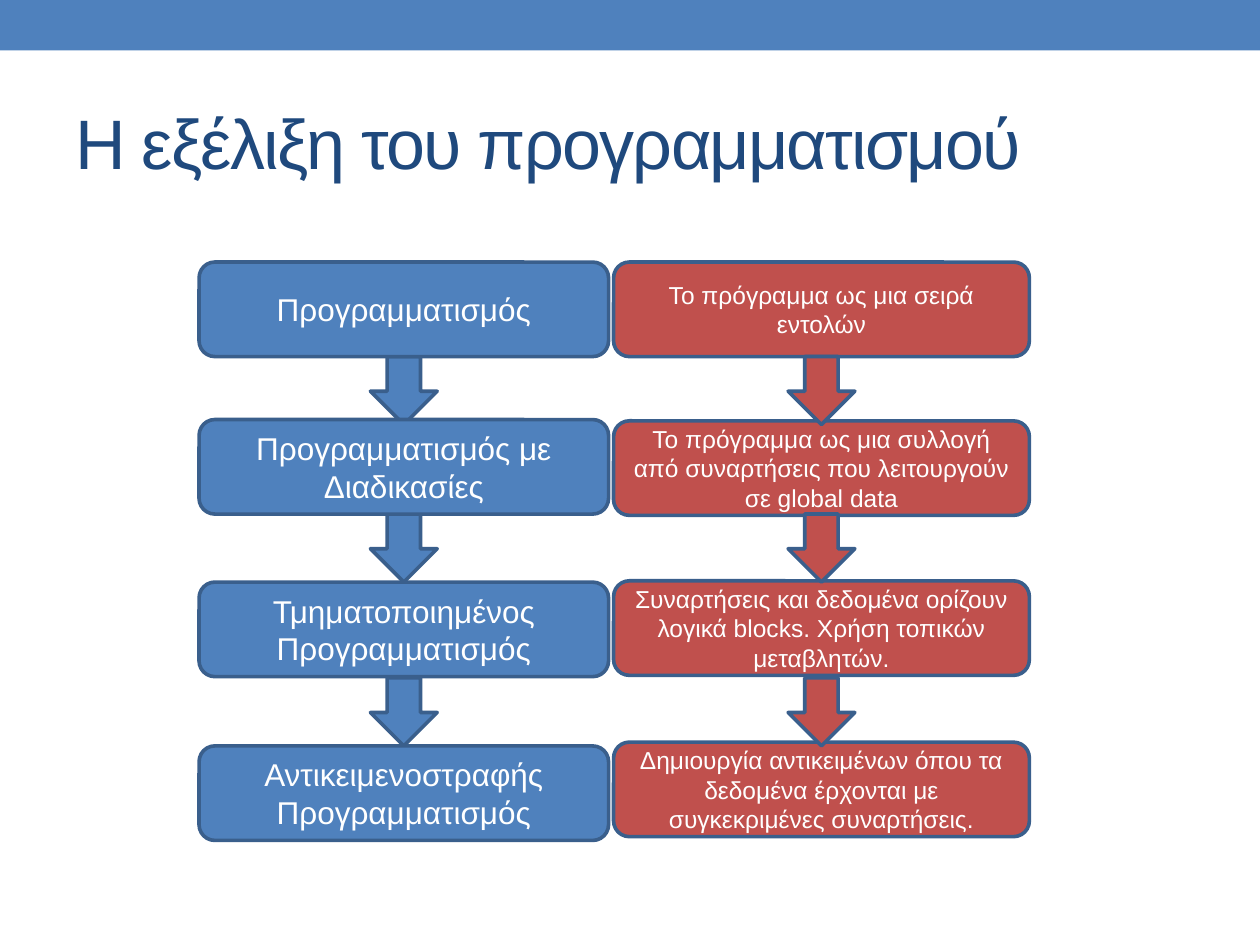
from pptx import Presentation
from pptx.dml.color import RGBColor
from pptx.enum.shapes import MSO_SHAPE as Shape
from pptx.enum.text import MSO_ANCHOR as Anchor, PP_ALIGN as Align
from pptx.util import Inches, Pt

COLORS = {
    "blue": "4F81BD",
    "red": "C0504D",
    "outline": "3A5F8C",
    "title": "1F497D",
    "white": "FFFFFF",
}
FONT = "Arial"
BOX_HEIGHT = 0.75
ARROW_WIDTH, ARROW_HEIGHT = 0.53, 0.54
ARROW_TOPS = (2.83, 4.08, 5.38)

STAGES = (
    (2.08, "Προγραμματισμός"),
    (3.33, "Προγραμματισμός με Διαδικασίες"),
    (4.62, "Τμηματοποιημένος Προγραμματισμός"),
    (5.92, "Αντικειμενοστραφής Προγραμματισμός"),
)
DESCRIPTIONS = (
    (2.08, "Το πρόγραμμα ως μια σειρά εντολών"),
    (3.34, "Το πρόγραμμα ως μια συλλογή από συναρτήσεις που λειτουργούν σε global data"),
    (4.61, "Συναρτήσεις και δεδομένα ορίζουν λογικά blocks. Χρήση τοπικών μεταβλητών."),
    (5.89, "Δημιουργία αντικειμένων όπου τα δεδομένα έρχονται με συγκεκριμένες συναρτήσεις."),
)


def color(name):
    return RGBColor.from_string(COLORS[name])


def set_text(shape, text, size, color_name, alignment):
    frame = shape.text_frame
    frame.word_wrap = True
    frame.vertical_anchor = Anchor.MIDDLE
    frame.text = text
    paragraph = frame.paragraphs[0]
    paragraph.alignment = alignment
    run = paragraph.runs[0]
    run.font.name = FONT
    run.font.size = Pt(size)
    run.font.color.rgb = color(color_name)
    return run


def add_block(slide, kind, box, fill, outlined=True):
    shape = slide.shapes.add_shape(kind, *map(Inches, box))
    shape.shadow.inherit = False
    shape.fill.solid()
    shape.fill.fore_color.rgb = color(fill)
    if outlined:
        shape.line.color.rgb = color("outline")
        shape.line.width = Pt(2.08)
    else:
        shape.line.fill.background()
    return shape


def add_title(slide, box, text):
    title = slide.shapes.add_textbox(*map(Inches, box))
    run = set_text(title, text, 40, "title", Align.LEFT)
    run.font._element.set("spc", "-100")


def add_arrows(slide, left, width, fill):
    arrow_left = left + (width - ARROW_WIDTH) / 2
    for top in ARROW_TOPS:
        add_block(slide, Shape.DOWN_ARROW, (arrow_left, top, ARROW_WIDTH, ARROW_HEIGHT), fill)


def add_boxes(slide, left, width, fill, entries, size):
    for top, text in entries:
        box = add_block(slide, Shape.ROUNDED_RECTANGLE, (left, top, width, BOX_HEIGHT), fill)
        set_text(box, text, size, "white", Align.CENTER)


def main():
    presentation = Presentation()
    presentation.slide_width = Inches(10)
    presentation.slide_height = Inches(7.5)
    slide = presentation.slides.add_slide(presentation.slide_layouts[6])

    add_block(slide, Shape.RECTANGLE, (0, 0, 10, 0.4), "blue", outlined=False)
    add_title(slide, (0.5, 0.58, 9, 1.08), "Η εξέλιξη του προγραμματισμού")
    add_arrows(slide, 1.58, 3.25, "blue")
    add_boxes(slide, 1.58, 3.25, "blue", STAGES, 18)
    add_boxes(slide, 4.87, 3.3, "red", DESCRIPTIONS, 14)
    add_arrows(slide, 4.87, 3.3, "red")

    presentation.save("out.pptx")


if __name__ == "__main__":
    main()
